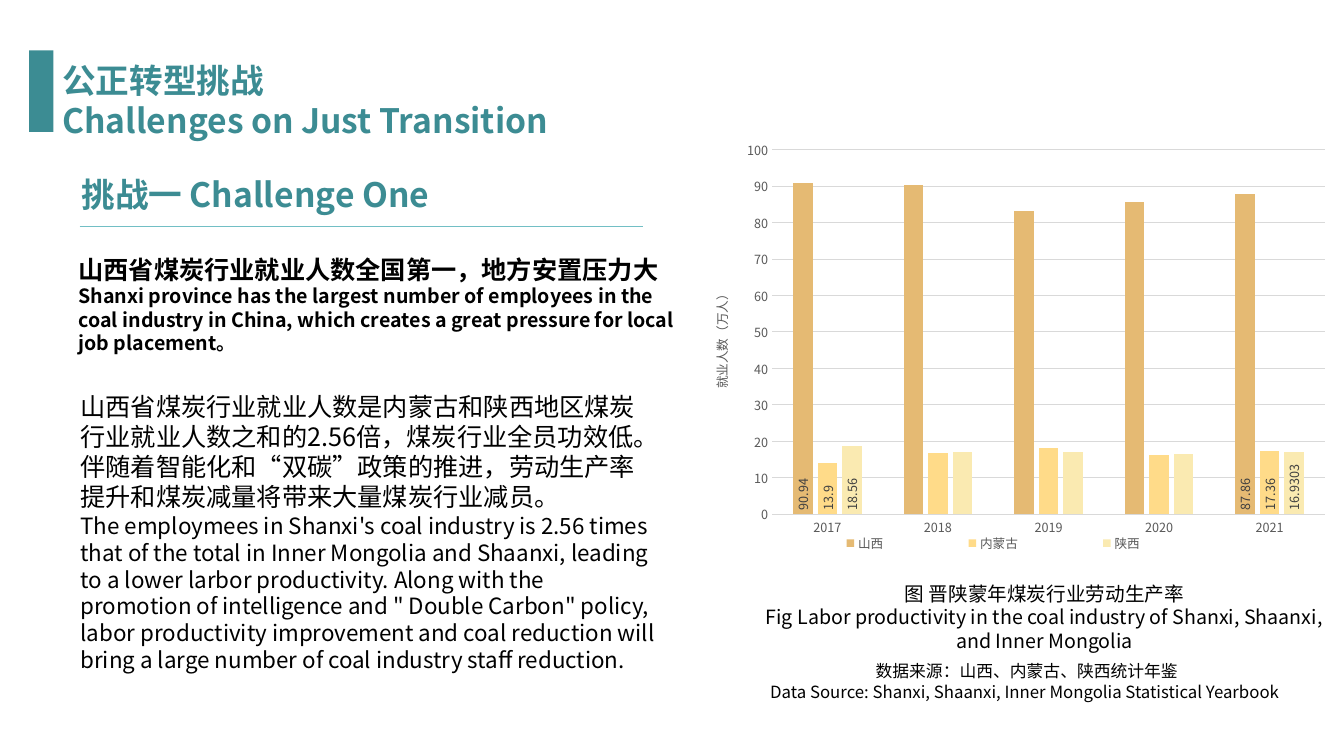
import lxml.etree
import pptx
import pptx.chart.data
import pptx.dml.color
import pptx.enum.chart
import pptx.enum.shapes
import pptx.enum.text
import pptx.oxml.ns
import pptx.util
from dataclasses import dataclass

Inches = pptx.util.Inches
Pt = pptx.util.Pt
qn = pptx.oxml.ns.qn
rgb = pptx.dml.color.RGBColor.from_string
PP_ALIGN = pptx.enum.text.PP_ALIGN
MSO_ANCHOR = pptx.enum.text.MSO_ANCHOR


@dataclass(frozen=True)
class Theme:
    font: str = "Noto Sans CJK SC"
    teal: str = "3C8C93"
    rule: str = "72BFC5"
    ink: str = "000000"
    axis: str = "595959"
    label: str = "404040"
    grid: str = "D9D9D9"
    bars: tuple = ("E5BA73", "FFDB89", "FAEAB1")
    heading: int = 24
    lead: int = 18
    body: int = 16
    caption: int = 14
    source: int = 12
    chart: int = 9


theme = Theme()


def add_text(paragraphs, at, color=theme.ink, bold=False, align=PP_ALIGN.LEFT,
             anchor=MSO_ANCHOR.TOP, first_spacing=None):
    """Add a text box from (text, size) pairs, one for each paragraph."""
    frame = slide.shapes.add_textbox(*map(Inches, at)).text_frame
    frame.word_wrap = True
    frame.vertical_anchor = anchor
    for number, (text, size) in enumerate(paragraphs):
        paragraph = frame.add_paragraph() if number else frame.paragraphs[0]
        paragraph.alignment = align
        run = paragraph.add_run()
        run.text = text
        style_font(run.font, size, color, bold)
        east_asian = lxml.etree.SubElement(run.font._element, qn("a:ea"))
        east_asian.set("typeface", theme.font)
    if first_spacing:
        frame.paragraphs[0].line_spacing = first_spacing


def style_font(font, size, color, bold=False):
    font.name = theme.font
    font.size = Pt(size)
    font.bold = bold
    font.color.rgb = rgb(color)


presentation = pptx.Presentation()
presentation.slide_width = Inches(13.33)
presentation.slide_height = Inches(7.5)
slide = presentation.slides.add_slide(presentation.slide_layouts[6])

# Headings
add_text([("公正转型挑战", theme.heading), ("Challenges on Just Transition", theme.heading)],
         (0.52, 0.62, 12.11, 0.75), color=theme.teal, bold=True, anchor=MSO_ANCHOR.MIDDLE)

title_bar = slide.shapes.add_shape(
    pptx.enum.shapes.MSO_SHAPE.RECTANGLE, Inches(0.29), Inches(0.5), Inches(0.24), Inches(0.81))
title_bar.shadow.inherit = False
title_bar.fill.solid()
title_bar.fill.fore_color.rgb = rgb(theme.teal)
title_bar.line.fill.background()

add_text([("挑战一 Challenge One", theme.heading)], (0.71, 1.68, 4.44, 0.5),
         color=theme.teal, bold=True)

heading_rule = slide.shapes.add_connector(
    pptx.enum.shapes.MSO_CONNECTOR.STRAIGHT, Inches(0.79), Inches(2.25), Inches(6.38), Inches(2.25))
heading_rule.line.color.rgb = rgb(theme.rule)
heading_rule.line.width = Pt(0.5)
lxml.etree.SubElement(heading_rule._element.spPr, qn("a:effectLst"))

# Challenge text
add_text([
    ("山西省煤炭行业就业人数全国第一，地方安置压力大", theme.lead),
    ("Shanxi province has the largest number of employees in the coal industry in China, "
     "which creates a great pressure for local job placement。", theme.caption),
], (0.68, 2.32, 6.29, 1.26), bold=True, first_spacing=1.5)

add_text([
    ("山西省煤炭行业就业人数是内蒙古和陕西地区煤炭行业就业人数之和的2.56倍，煤炭行业全员功效低。"
     "伴随着智能化和“双碳”政策的推进，劳动生产率提升和煤炭减量将带来大量煤炭行业减员。", theme.lead),
    ("The employmees in Shanxi's coal industry is 2.56 times that of the total in Inner Mongolia "
     "and Shaanxi, leading to a lower larbor productivity. Along with the promotion of "
     "intelligence and \" Double Carbon\" policy, labor productivity improvement and coal "
     "reduction will bring a large number of coal industry staff reduction.", theme.body),
], (0.7, 3.83, 5.92, 3.47))

# Employment chart
employment = pptx.chart.data.CategoryChartData()
employment.categories = ["2017", "2018", "2019", "2020", "2021"]
employment.add_series("山西", (90.94, 90.4, 83.11, 85.62, 87.86))
employment.add_series("内蒙古", (13.9, 16.82, 18.09, 16.19, 17.36))
employment.add_series("陕西", (18.56, 17.01, 16.92, 16.4, 16.9303))
chart = slide.shapes.add_chart(
    pptx.enum.chart.XL_CHART_TYPE.COLUMN_CLUSTERED,
    Inches(6.82), Inches(1.31), Inches(6.45), Inches(4.41), employment).chart
chart.has_title = False
style_font(chart.font, theme.chart, theme.axis)

plot = chart.plots[0]
plot.vary_by_categories = False
plot.gap_width = 219
plot.overlap = -27
for series, color in zip(plot.series, theme.bars):
    series.format.fill.solid()
    series.format.fill.fore_color.rgb = rgb(color)
    series.invert_if_negative = False
    series.data_labels.show_value = False
    for year in (0, 4):
        label = series.points[year].data_label
        style_font(label.font, theme.chart, theme.label)
        label.position = pptx.enum.chart.XL_LABEL_POSITION.INSIDE_BASE
    for label_xml in series._element.iter(qn("c:dLbl")):
        body = label_xml.find(qn("c:txPr")).find(qn("a:bodyPr"))
        body.set("rot", "-5400000")
        body.set("vert", "horz")

years, people = chart.category_axis, chart.value_axis
for axis in (years, people):
    axis.major_tick_mark = axis.minor_tick_mark = pptx.enum.chart.XL_TICK_MARK.NONE
    style_font(axis.tick_labels.font, theme.chart, theme.axis)
people.minimum_scale, people.maximum_scale, people.major_unit = 0, 100, 10
people.format.line.fill.background()
people.has_major_gridlines = True
for line in (years.format.line, people.major_gridlines.format.line):
    line.color.rgb = rgb(theme.grid)
    line.width = Pt(0.75)
axis_title = people.axis_title.text_frame
axis_title.text = "就业人数（万人）"
style_font(axis_title.paragraphs[0].runs[0].font, theme.chart, theme.axis)

chart.has_legend = True
chart.legend.position = pptx.enum.chart.XL_LEGEND_POSITION.BOTTOM
chart.legend.include_in_layout = False
style_font(chart.legend.font, theme.chart, theme.axis)

# Places of plot and legend, as shares of the chart frame
plot_area = chart._chartSpace.find(".//" + qn("c:plotArea"))
for owner, index, target, box in (
        (plot_area, 0, "inner", (0.13, 0.04, 0.85, 0.82)),
        (chart.legend._element, 1, None, (0.12, 0.89, 0.7, 0.07))):
    for old_layout in owner.findall(qn("c:layout")):
        owner.remove(old_layout)
    layout = lxml.etree.Element(qn("c:layout"))
    owner.insert(index, layout)
    manual = lxml.etree.SubElement(layout, qn("c:manualLayout"))
    settings = [("layoutTarget", target)] if target else []
    settings += [("xMode", "edge"), ("yMode", "edge"), *zip("xywh", box)]
    for tag, value in settings:
        lxml.etree.SubElement(manual, qn("c:" + tag)).set("val", str(value))

# Caption and source
add_text([
    ("图 晋陕蒙年煤炭行业劳动生产率", theme.caption),
    ("Fig Labor productivity in the coal industry of Shanxi, Shaanxi, and Inner Mongolia",
     theme.caption),
], (7.45, 5.72, 5.82, 0.81), align=PP_ALIGN.CENTER)

add_text([
    ("数据来源：山西、内蒙古、陕西统计年鉴", theme.source),
    ("Data Source: Shanxi, Shaanxi, Inner Mongolia Statistical Yearbook ", theme.source),
], (7.22, 6.51, 5.93, 0.5), align=PP_ALIGN.CENTER)

presentation.save("out.pptx")
